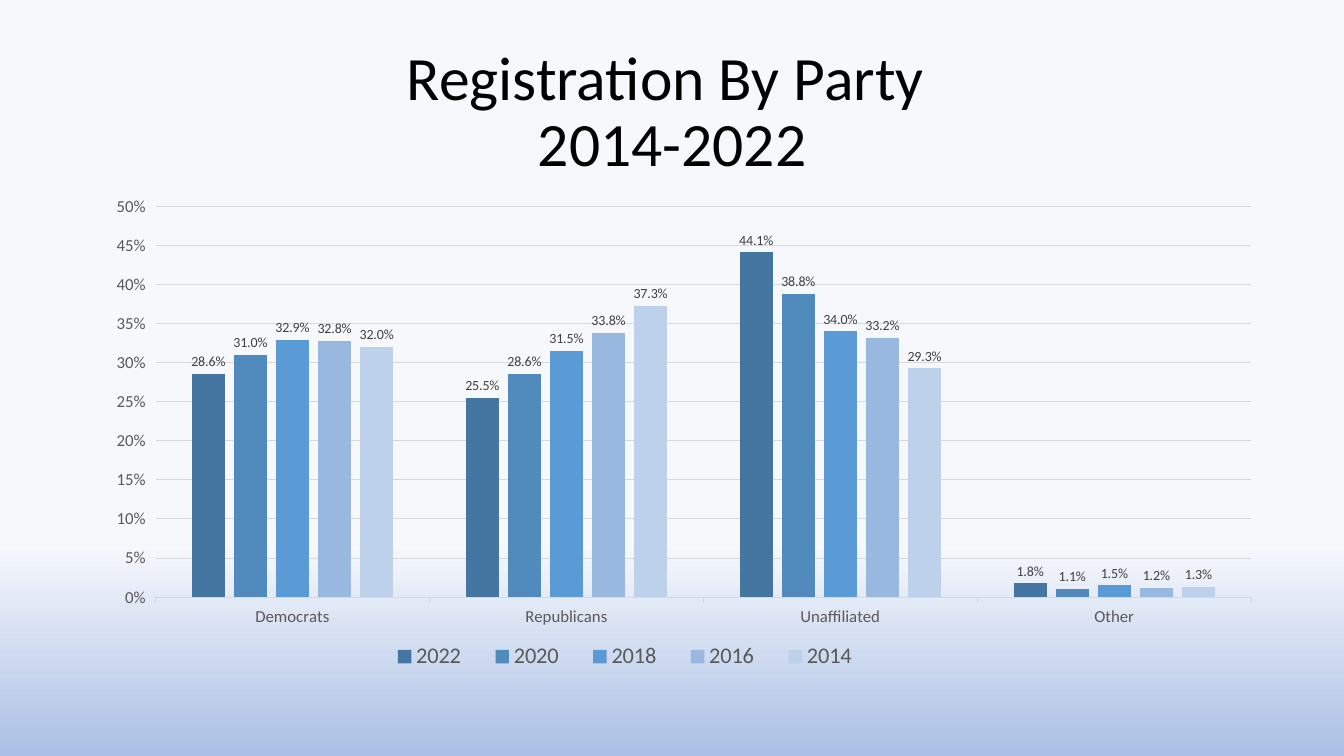
from lxml.etree import SubElement
from pptx import Presentation
from pptx.chart.data import CategoryChartData
from pptx.dml.color import RGBColor
from pptx.enum.chart import XL_CHART_TYPE, XL_LABEL_POSITION, XL_LEGEND_POSITION, XL_TICK_MARK
from pptx.enum.text import MSO_ANCHOR, MSO_AUTO_SIZE, PP_ALIGN
from pptx.oxml.ns import qn
from pptx.util import Cm, Pt

FONT = "Calibri"
BLACK = RGBColor(0x00, 0x00, 0x00)
AXIS_GREY = RGBColor(0x59, 0x59, 0x59)
LABEL_GREY = RGBColor(0x40, 0x40, 0x40)
LINE_GREY = RGBColor(0xD9, 0xD9, 0xD9)
SKY_TOP = RGBColor(0xF6, 0xF8, 0xFC)
SKY_BOTTOM = RGBColor(0xAB, 0xC0, 0xE4)

PARTIES = ["Democrats", "Republicans", "Unaffiliated", "Other"]
REGISTRATION = [
    ("2022", (0.286, 0.255, 0.441, 0.018), RGBColor(0x45, 0x76, 0xA2)),
    ("2020", (0.310, 0.286, 0.388, 0.011), RGBColor(0x51, 0x8A, 0xBD)),
    ("2018", (0.329, 0.315, 0.340, 0.015), RGBColor(0x5B, 0x9B, 0xD5)),
    ("2016", (0.328, 0.338, 0.332, 0.012), RGBColor(0x98, 0xB8, 0xE0)),
    ("2014", (0.320, 0.373, 0.293, 0.013), RGBColor(0xBE, 0xD1, 0xEA)),
]


def format_font(font, size, color):
    font.name = FONT
    font.size = Pt(size)
    font.bold = False
    font.color.rgb = color


def write_text(frame, text, size, color, align=PP_ALIGN.CENTER, line_spacing=0.9):
    para = frame.paragraphs[0]
    para.text = text
    para.alignment = align
    para.line_spacing = line_spacing
    for span in para.runs:
        format_font(span.font, size, color)


def paint_background(page):
    fill = page.background.fill
    fill.gradient()
    fill.gradient_angle = 270
    for stop, position, color in zip(fill.gradient_stops, (0.72, 1), (SKY_TOP, SKY_BOTTOM)):
        stop.position = position
        stop.color.rgb = color


def add_title(page, left, top, width, height):
    title = page.shapes.title
    title.left, title.top, title.width, title.height = left, top, width, height
    frame = title.text_frame
    frame.auto_size = MSO_AUTO_SIZE.NONE
    frame.vertical_anchor = MSO_ANCHOR.MIDDLE
    write_text(frame, "Registration By Party \v2014-2022", size=44, color=BLACK)


def place_chart_part(part, index, inner=False, **fractions):
    """Fix a chart part at x, y, w, h, given as fractions of the chart's box."""
    for old_layout in part.findall(qn("c:layout")):
        part.remove(old_layout)
    layout = SubElement(part, qn("c:layout"))
    part.insert(index, layout)
    manual = SubElement(layout, qn("c:manualLayout"))
    if inner:
        SubElement(manual, qn("c:layoutTarget")).set("val", "inner")
    for name in "xy":
        SubElement(manual, qn(f"c:{name}Mode")).set("val", "edge")
    for name, value in fractions.items():
        SubElement(manual, qn(f"c:{name}")).set("val", str(value))


def format_line(line, color=LINE_GREY):
    line.color.rgb = color
    line.width = Pt(0.75)


def format_axes(chart):
    shares, parties = chart.value_axis, chart.category_axis
    for axis in (shares, parties):
        format_font(axis.tick_labels.font, 12, AXIS_GREY)
        axis.major_tick_mark = XL_TICK_MARK.OUTSIDE
        axis.minor_tick_mark = XL_TICK_MARK.NONE
    format_line(parties.format.line)
    shares.format.line.fill.background()
    shares.minimum_scale, shares.maximum_scale, shares.major_unit = 0, 0.5, 0.05
    shares.tick_labels.number_format = "0%"
    shares.tick_labels.number_format_is_linked = False
    format_line(shares.major_gridlines.format.line)


def format_bars(plot):
    plot.vary_by_categories = False
    plot.gap_width, plot.overlap = 219, -27
    for series, (_, _, color) in zip(plot.series, REGISTRATION):
        series.format.fill.solid()
        series.format.fill.fore_color.rgb = color
        series.invert_if_negative = False
        labels = series.data_labels
        labels.show_value = True
        labels.number_format = "0.0%"
        labels.number_format_is_linked = False
        labels.position = XL_LABEL_POSITION.OUTSIDE_END
        format_font(labels.font, 10, LABEL_GREY)


def add_registration_chart(page, left, top, width, height):
    data = CategoryChartData(number_format="0.0%")
    data.categories = PARTIES
    for year, shares, _ in REGISTRATION:
        data.add_series(year, shares)
    chart = page.shapes.add_chart(
        XL_CHART_TYPE.COLUMN_CLUSTERED, left, top, width, height, data).chart
    chart.has_title = False
    format_font(chart.font, 10, BLACK)
    format_axes(chart)
    format_bars(chart.plots[0])
    chart.has_legend = True
    chart.legend.position = XL_LEGEND_POSITION.BOTTOM
    chart.legend.include_in_layout = False
    format_font(chart.legend.font, 16, AXIS_GREY)
    chart_space = chart.element
    place_chart_part(chart_space.find(".//" + qn("c:plotArea")), 0, inner=True,
                     x=0.053, y=0.04, w=0.927, h=0.79)
    place_chart_part(chart_space.find(".//" + qn("c:legend")), 1,
                     x=0.235, y=0.91, w=0.43, h=0.08)


def main():
    deck = Presentation()
    deck.slide_width, deck.slide_height = Cm(33.87), Cm(19.05)
    page = deck.slides.add_slide(deck.slide_layouts[5])
    paint_background(page)
    add_title(page, Cm(2.34), Cm(1.02), Cm(29.21), Cm(3.68))
    add_registration_chart(page, Cm(2.34), Cm(4.7), Cm(29.79), Cm(12.47))
    deck.save("out.pptx")


if __name__ == "__main__":
    main()
